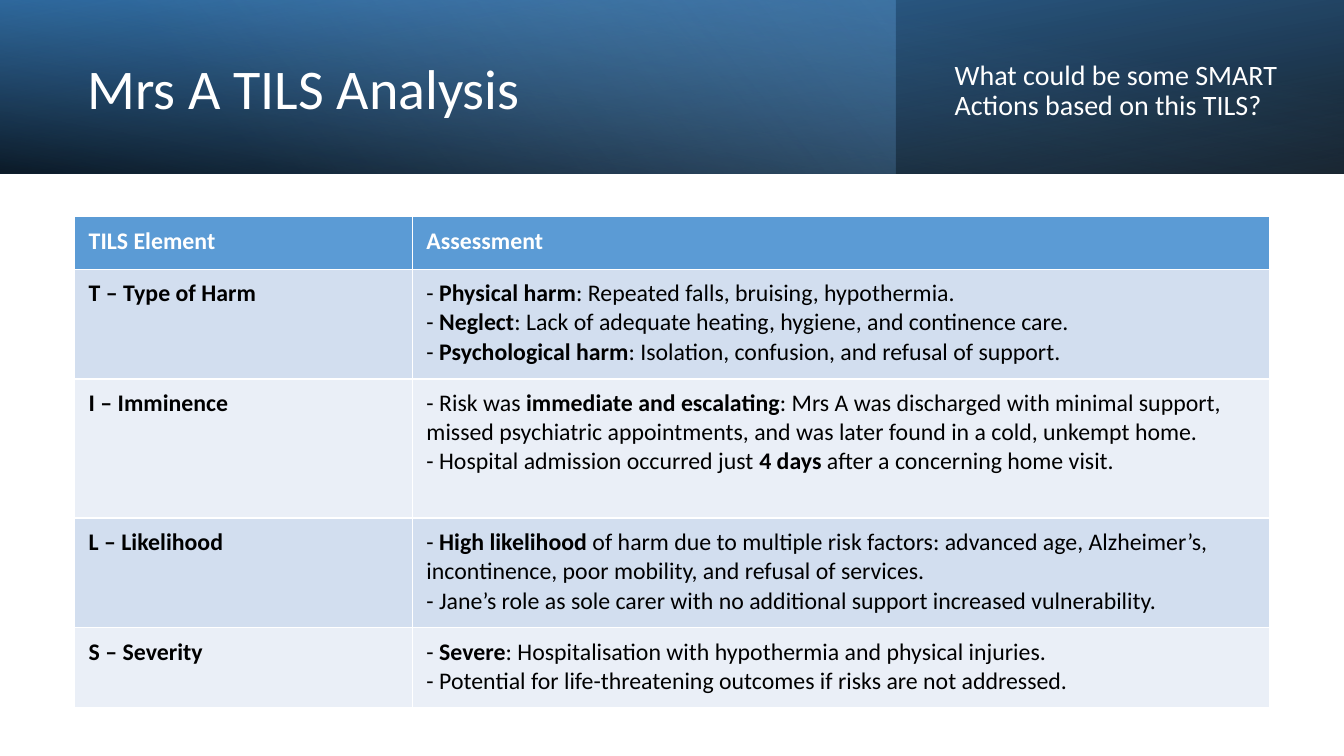
from lxml.etree import SubElement
from pptx import Presentation
from pptx.dml.color import RGBColor
from pptx.enum.shapes import MSO_SHAPE as Shape
from pptx.enum.text import MSO_ANCHOR as Anchor
from pptx.oxml.ns import qn
from pptx.util import Inches, Pt

FONT = "Calibri"
WHITE = RGBColor(0xFF, 0xFF, 0xFF)
BLACK = RGBColor(0x00, 0x00, 0x00)
BLUE = RGBColor(0x5B, 0x9B, 0xD5)
DEEP = RGBColor(0x2E, 0x75, 0xB6)
SKY = RGBColor(0x9D, 0xC3, 0xE6)
BANDS = [RGBColor(0xD2, 0xDE, 0xEF), RGBColor(0xEA, 0xEF, 0xF7)]

# Text between ** marks is bold
ROWS = [
    ("TILS Element", "**Assessment**", 0.52),
    ("T – Type of Harm",
     "- **Physical harm**: Repeated falls, bruising, hypothermia.\n"
     "- **Neglect**: Lack of adequate heating, hygiene, and continence care.\n"
     "- **Psychological harm**: Isolation, confusion, and refusal of support.",
     1.09),
    ("I – Imminence",
     "- Risk was **immediate and escalating**: Mrs A was discharged with "
     "minimal support, missed psychiatric appointments, and was later found "
     "in a cold, unkempt home.\n"
     "- Hospital admission occurred just **4 days** after a concerning home "
     "visit.",
     1.38),
    ("L – Likelihood",
     "- **High likelihood** of harm due to multiple risk factors: advanced "
     "age, Alzheimer’s, incontinence, poor mobility, and refusal of "
     "services.\n"
     "- Jane’s role as sole carer with no additional support increased "
     "vulnerability.",
     1.09),
    ("S – Severity",
     "- **Severe**: Hospitalisation with hypothermia and physical injuries.\n"
     "- Potential for life-threatening outcomes if risks are not addressed.",
     0.79),
]


def add_panel(slide, box, angle, stops, flip=False, turn=0):
    """Gradient rectangle; each stop is (position, colour, opacity in %)."""
    panel = slide.shapes.add_shape(Shape.RECTANGLE, *map(Inches, box))
    panel.shadow.inherit = False
    panel.line.fill.background()
    panel.rotation = turn
    props = panel._element.spPr
    if flip:
        props.find(qn("a:xfrm")).set("flipH", "1")
    panel.fill.gradient()
    panel.fill.gradient_angle = 360 - angle
    for stop, (place, color, _) in zip(panel.fill.gradient_stops, stops):
        stop.position = place
        stop.color.rgb = color
    for node, (_, _, alpha) in zip(props.iter(qn("a:srgbClr")), stops):
        if alpha < 100:
            SubElement(node, qn("a:alpha")).set("val", str(alpha * 1000))


def add_label(slide, box, text, size, before=0):
    frame = slide.shapes.add_textbox(*map(Inches, box)).text_frame
    frame.word_wrap = True
    frame.vertical_anchor = Anchor.MIDDLE
    para = frame.paragraphs[0]
    para.text = text
    para.line_spacing = 0.9
    para.space_before = Pt(before)
    para.font.name = FONT
    para.font.size = Pt(size)
    para.font.color.rgb = WHITE


def add_header(slide, box):
    left, top, width, height = box
    # Layered gradients
    add_panel(slide, box, 100, [(0, BLACK, 96), (1, DEEP, 100)], True, 180)
    add_panel(slide, (left, top, width * 2 / 3, height), 140,
              [(0, BLUE, 41), (0.74, SKY, 0)])
    add_panel(slide, box, 260, [(0, BLACK, 63), (0.78, BLUE, 15)], True)
    # Title and question
    add_label(slide, (left + 0.77, top + 0.27, 7.72, 1.27),
              "Mrs A TILS Analysis", 40)
    add_label(slide, (left + 9.37, top + 0.43, 3.54, 0.96),
              "What could be some SMART Actions based on this TILS?", 20, 10)


def fill_cell(cell, text, fill, color):
    cell.fill.solid()
    cell.fill.fore_color.rgb = fill
    cell.margin_left, cell.margin_right = Inches(0.14), Inches(0.1)
    cell.margin_top, cell.margin_bottom = Inches(0.1), Inches(0.08)
    para = cell.text_frame.paragraphs[0]
    para.font.name = FONT
    para.font.size = Pt(17)
    para.font.color.rgb = color
    for num, line in enumerate(text.split("\n")):
        if num:
            para.add_line_break()
        for part, words in enumerate(line.split("**")):
            if words:
                run = para.add_run()
                run.text = words
                run.font.name = FONT
                run.font.size = Pt(17)
                run.font.color.rgb = color
                run.font.bold = part % 2 == 1


def add_grid(slide, box):
    table = slide.shapes.add_table(len(ROWS), 2, *map(Inches, box)).table
    first = 3.35
    table.columns[0].width = Inches(first)
    table.columns[1].width = Inches(box[2] - first)
    for num, (name, text, height) in enumerate(ROWS):
        table.rows[num].height = Inches(height)
        fill = BANDS[(num - 1) % 2] if num else BLUE
        color = BLACK if num else WHITE
        fill_cell(table.cell(num, 0), f"**{name}**", fill, color)
        fill_cell(table.cell(num, 1), text, fill, color)


def main():
    deck = Presentation()
    deck.slide_width, deck.slide_height = Inches(13.33), Inches(7.5)
    slide = deck.slides.add_slide(deck.slide_layouts[6])
    add_header(slide, (0, 0, 13.33, 1.72))
    add_grid(slide, (0.74, 2.15, 11.85, 4.87))
    deck.save("out.pptx")


if __name__ == "__main__":
    main()
